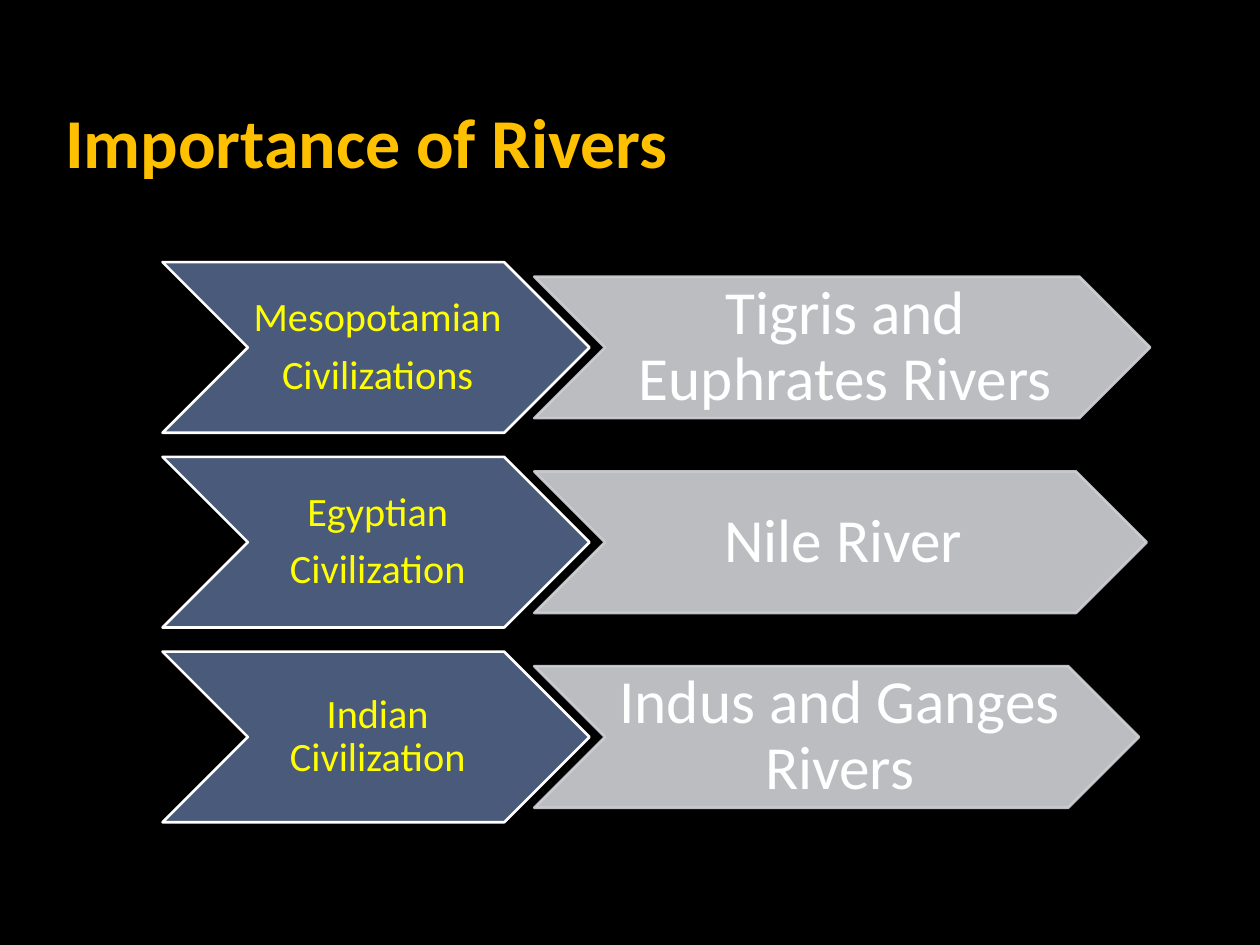
import pptx
import pptx.util
import pptx.dml.color
import pptx.enum.shapes
import pptx.enum.text
import pptx.oxml.ns
import lxml.etree

Pt = pptx.util.Pt
ALIGN = pptx.enum.text.PP_ALIGN
ANCHOR = pptx.enum.text.MSO_ANCHOR

# Row grid, in points
ROW_TOP, ROW_PITCH = 149.8, 111.3
CIV_LEFT, CIV_WIDTH, CIV_HEIGHT = 92.9, 244, 97.5
RIVER_LEFT, RIVER_HEIGHT = 305.3, 80.9

# Civilization paragraphs, rivers, width of the river chevron
ROWS = [
    (["Mesopotamian", "Civilizations"], "Tigris and Euphrates Rivers", 352),
    (["Egyptian", "Civilization"], "Nile River", 350),
    (["Indian Civilization"], "Indus and Ganges Rivers", 345.6),
]


def set_color(fill, hex_color, alpha=100):
    fill.solid()
    fill.fore_color.rgb = pptx.dml.color.RGBColor.from_string(hex_color)
    if alpha < 100:
        qn = pptx.oxml.ns.qn
        solid = fill._xPr.find(qn("a:solidFill"))
        node = lxml.etree.SubElement(solid.find(qn("a:srgbClr")), qn("a:alpha"))
        node.set("val", str(alpha * 1000))


def write_text(tf, paragraphs, size, color, bold=False, align=ALIGN.CENTER,
               anchor=ANCHOR.MIDDLE, spacing=None, before=0, after=0):
    tf.word_wrap = True
    tf.auto_size = pptx.enum.text.MSO_AUTO_SIZE.NONE
    tf.vertical_anchor = anchor
    for i, text in enumerate(paragraphs):
        p = tf.paragraphs[0] if i == 0 else tf.add_paragraph()
        p.alignment = align
        p.line_spacing = spacing
        p.space_before, p.space_after = Pt(before), Pt(after)
        r = p.add_run()
        r.text = text
        r.font.name, r.font.size, r.font.bold = "Calibri", Pt(size), bold
        set_color(r.font.fill, color)


def add_title(s, text):
    sp = s.shapes.title
    sp.left, sp.top, sp.width, sp.height = Pt(30), Pt(24), Pt(605), Pt(84)
    write_text(sp.text_frame, [text], 40, "FFC000", bold=True,
               align=ALIGN.LEFT, anchor=ANCHOR.BOTTOM, before=4)


def add_chevron(s, left, top, width, height, paragraphs, fill, line,
                size, color, inset, alpha=100):
    sp = s.shapes.add_shape(pptx.enum.shapes.MSO_SHAPE.CHEVRON,
                            Pt(left), Pt(top), Pt(width), Pt(height))
    sp.shadow.inherit = False
    set_color(sp.fill, fill, alpha)
    set_color(sp.line.fill, line, alpha)
    sp.line.width = Pt(1.5)
    tf = sp.text_frame
    tf.margin_left, tf.margin_right = Pt(inset), Pt(0)
    tf.margin_top = tf.margin_bottom = Pt(1.5)
    write_text(tf, paragraphs, size, color, spacing=0.9,
               after=round(0.35 * size))


def main():
    prs = pptx.Presentation()
    prs.slide_width, prs.slide_height = Pt(720), Pt(540)
    s = prs.slides.add_slide(prs.slide_layouts[5])
    set_color(s.background.fill, "000000")

    add_title(s, "Importance of Rivers")

    # One civilization and its rivers per row
    for i, (civilization, rivers, river_width) in enumerate(ROWS):
        top = ROW_TOP + i * ROW_PITCH
        add_chevron(s, CIV_LEFT, top, CIV_WIDTH, CIV_HEIGHT, civilization,
                    "4A5A7A", "FFFFFF", 23, "FFFF00", inset=2)
        add_chevron(s, RIVER_LEFT, top + (CIV_HEIGHT - RIVER_HEIGHT) / 2,
                    river_width, RIVER_HEIGHT, [rivers],
                    "D0D2D7", "D0D2D7", 35, "FFFFFF", inset=3.5, alpha=90)

    prs.save("out.pptx")


if __name__ == "__main__":
    main()
